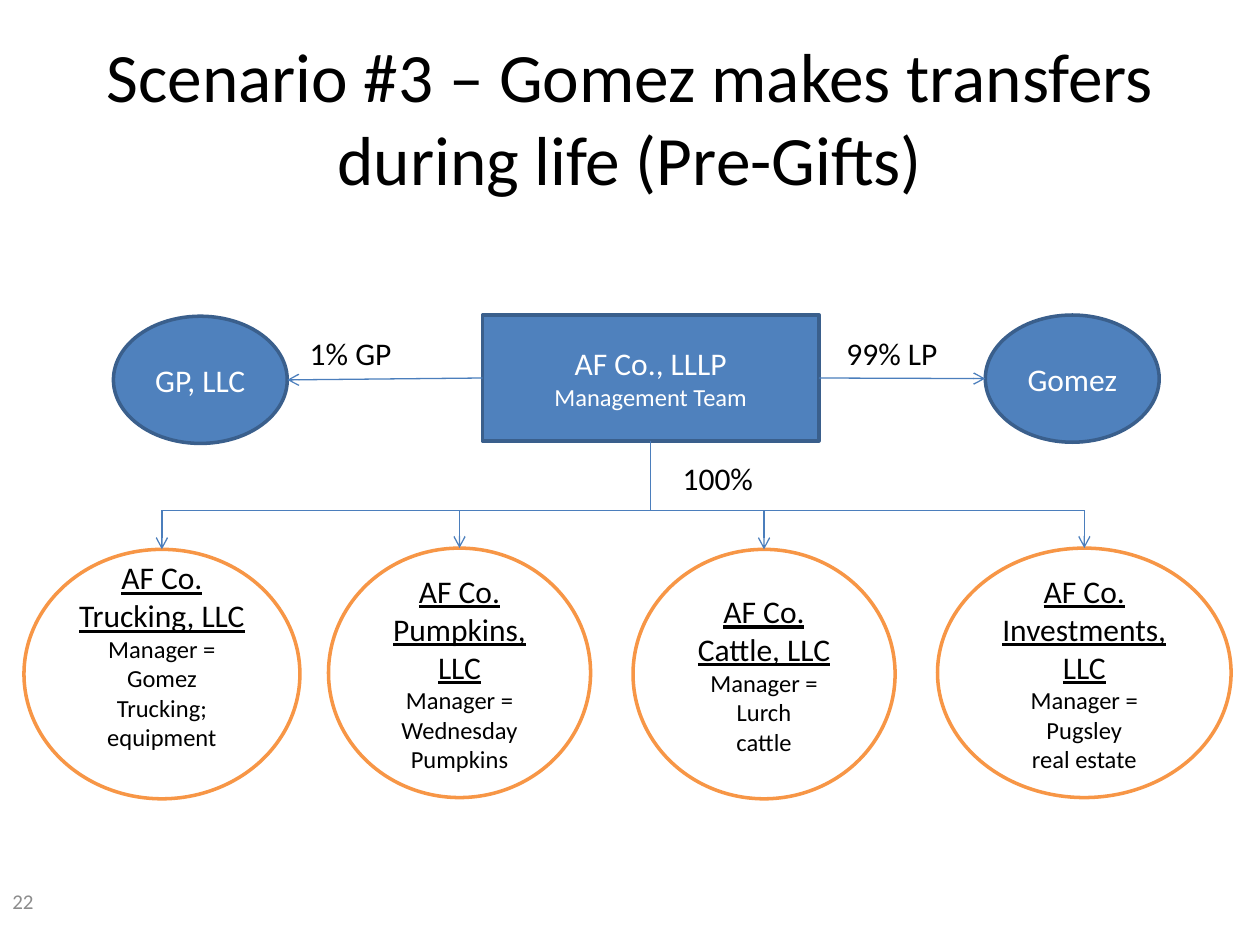
"""Build the ownership chart slide for Scenario #3."""
import pptx
import pptx.util
import pptx.dml.color
import pptx.enum.shapes
import pptx.enum.text
import pptx.oxml
from pptx.oxml.ns import qn

TITLE = "Scenario #3 – Gomez makes transfers during life (Pre-Gifts)"
FIRM = ["AF Co., LLLP", "Management Team"]
OWNERS = [("GP, LLC", 0.9, 2.51), ("Gomez", 7.82, 2.5)]
UNITS = [
    (["AF Co. Trucking, LLC", "Manager = Gomez", "Trucking; equipment"], 2.19, 0.01, 0.35),
    (["AF Co. Pumpkins, LLC", "Manager = Wednesday", "Pumpkins"], 2.08, 0, 0.05),
    (["AF Co. Cattle, LLC", "Manager = Lurch", "cattle"], 2.08, 0.01, 0.05),
    (["AF Co. Investments, LLC", "Manager = Pugsley", "real estate"], 2.33, 0, 0.05),
]
LABELS = [
    ("1% GP", 2.36, 2.6, 1.29),
    ("99% LP", 6.62, 2.6, 1.07),
    ("100%", 5.32, 3.59, 0.96),
]
COLORS = {"blue": "4F81BD", "edge": "3A5F8C", "wire": "4B7EBC", "ring": "F79646",
          "white": "FFFFFF", "black": "000000", "gray": "8C8C8C"}
LEFT, STEP = 0.19, 2.417
BUS, LOW = 4.05, 4.35
FIRM_BOX = (3.83, 2.5, 2.67, 1)
OWNER_W, OWNER_H = 1.38, 1.01

Inches = pptx.util.Inches
Pt = pptx.util.Pt
Kind = pptx.enum.shapes.MSO_SHAPE
Anchor = pptx.enum.text.MSO_ANCHOR
Align = pptx.enum.text.PP_ALIGN


def tint(name):
    return pptx.dml.color.RGBColor.from_string(COLORS[name])


def write(frame, lines, sizes, color, align=Align.CENTER, under=False):
    frame.word_wrap = True
    for i, (line, size) in enumerate(zip(lines, sizes)):
        para = frame.paragraphs[0] if i == 0 else frame.add_paragraph()
        para.text = line
        para.alignment = align
        font = para.font
        font.name, font.size = "Calibri", Pt(size)
        font.color.rgb = tint(color)
        if under and i == 0:
            font.underline = True


def node(slide, kind, box, lines, fill, edge, color, under=False):
    shape = slide.shapes.add_shape(kind, *map(Inches, box))
    shape.shadow.inherit = False
    shape.fill.solid()
    shape.fill.fore_color.rgb = tint(fill)
    shape.line.color.rgb = tint(edge)
    shape.line.width = Pt(2)
    shape.text_frame.vertical_anchor = Anchor.MIDDLE
    write(shape.text_frame, lines, (18, 14, 14), color, under=under)
    return shape


def wire(slide, start, end, arrow=True):
    link = slide.shapes.add_connector(
        pptx.enum.shapes.MSO_CONNECTOR.STRAIGHT, *map(Inches, start + end))
    link.line.color.rgb = tint("wire")
    link.line.width = Pt(0.75)
    if arrow:
        tip = pptx.oxml.xmlchemy.OxmlElement("a:tailEnd")
        tip.set("type", "arrow")
        link.line._get_or_add_ln().append(tip)
    props = link._element.spPr
    props.append(props.makeelement(qn("a:effectLst"), {}))
    return link


def label(slide, text, box, size=18, color="black"):
    frame = slide.shapes.add_textbox(*map(Inches, box)).text_frame
    write(frame, [text], [size], color, Align.LEFT)
    return frame


def main():
    deck = pptx.Presentation()
    deck.slide_width, deck.slide_height = Inches(10), Inches(7.5)
    slide = deck.slides.add_slide(deck.slide_layouts[5])

    title = slide.shapes.title
    title.left, title.top, title.width, title.height = map(Inches, (0.5, 0.3, 9, 1.25))
    title.text_frame.auto_size = pptx.enum.text.MSO_AUTO_SIZE.NONE
    title.text_frame.vertical_anchor = Anchor.MIDDLE
    write(title.text_frame, [TITLE], [39.6], "black")

    firm = node(slide, Kind.RECTANGLE, FIRM_BOX, FIRM, "blue", "edge", "white")
    x, y, w, h = FIRM_BOX
    mid = x + w / 2
    ports = [(1, (x, y + h / 2), OWNER_W), (3, (x + w, y + h / 2), 0)]
    for (name, left, top), (site, start, reach) in zip(OWNERS, ports):
        node(slide, Kind.OVAL, (left, top, OWNER_W, OWNER_H), [name],
             "blue", "edge", "white")
        link = wire(slide, start, (left + reach, top + OWNER_H / 2))
        link.begin_connect(firm, site)

    hubs = []
    for i, (lines, wide, drop, pad) in enumerate(UNITS):
        left, top = LEFT + i * STEP, LOW + drop
        unit = node(slide, Kind.OVAL, (left, top, wide, 1.98), lines,
                    "white", "ring", "black", under=True)
        unit.text_frame.margin_bottom = Inches(pad)
        hub = left + wide / 2
        wire(slide, (hub, BUS), (hub, top)).end_connect(unit, 0)
        hubs.append(hub)

    wire(slide, (hubs[0], BUS), (hubs[-1], BUS), arrow=False)
    stem = wire(slide, (mid, y + h), (mid, BUS), arrow=False)
    stem.begin_connect(firm, 2)

    for text, left, top, wide in LABELS:
        label(slide, text, (left, top, wide, 0.4))
    page = label(slide, "22", (0, 6.95, 2.33, 0.4), 12, "gray")
    page.vertical_anchor = Anchor.MIDDLE

    deck.save("out.pptx")


if __name__ == "__main__":
    main()
